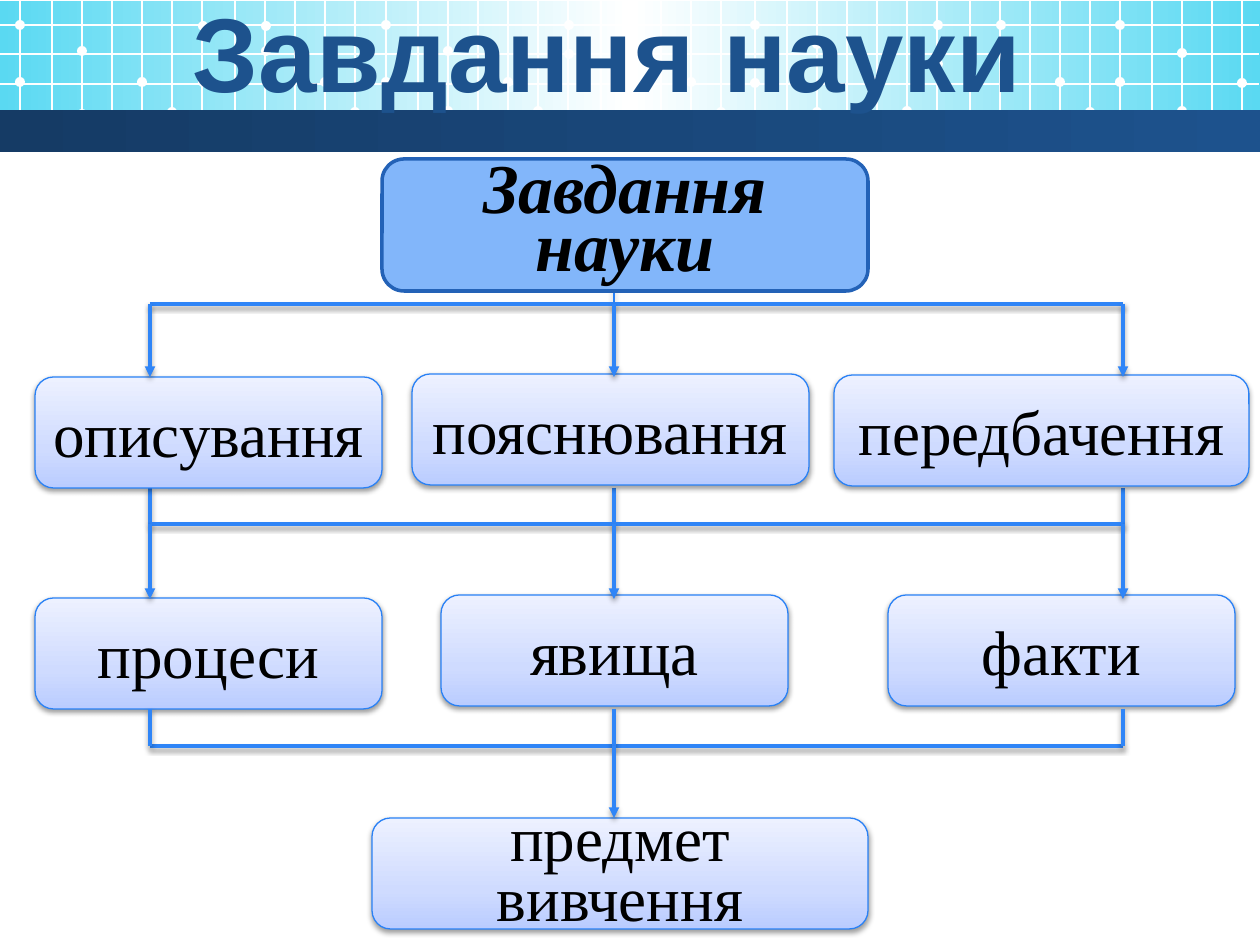
"""Build the slide on the tasks of science: a patterned header above a flow diagram."""
import dataclasses

import lxml.etree
import pptx
import pptx.dml.color
import pptx.enum.shapes
import pptx.enum.text
import pptx.oxml
import pptx.oxml.ns
import pptx.util

DRAWING = "http://schemas.openxmlformats.org/drawingml/2006/main"
SHADOW = (
    f'<a:effectLst xmlns:a="{DRAWING}"><a:outerShdw blurRad="39370" dist="20320" dir="5400000" '
    'rotWithShape="0"><a:srgbClr val="000000"><a:alpha val="38000"/></a:srgbClr>'
    "</a:outerShdw></a:effectLst>"
)


@dataclasses.dataclass(frozen=True)
class Theme:
    white: str = "FFFFFF"
    black: str = "000000"
    title: str = "1D528D"
    root_fill: str = "82B6FA"
    root_line: str = "2362B7"
    box_line: str = "2981F6"
    link: str = "2F85F7"
    header: tuple = ((0, "5AD9F2"), (50, "FFFFFF"), (100, "5AD9F2"))
    band: tuple = ((0, "153B65"), (100, "1D528D"))
    box: tuple = ((0, "BACCFF"), (35, "CFDBFF"), (100, "EDF1FF"))
    title_font: str = "Arial"
    body_font: str = "Times New Roman"
    title_size: int = 60
    root_size: int = 40
    body_size: int = 36
    thin: float = 0.75
    thick: float = 2


class SlideBuilder:
    def __init__(self, presentation, theme):
        self.theme = theme
        self.slide = presentation.slides.add_slide(presentation.slide_layouts[6])

    @staticmethod
    def px(length):
        return pptx.util.Emu(round(length * 914400 / 126))

    @staticmethod
    def color(value):
        return pptx.dml.color.RGBColor.from_string(value)

    def paint(self, shape, fill, angle=0):
        if isinstance(fill, str):
            shape.fill.solid()
            shape.fill.fore_color.rgb = self.color(fill)
            return
        shape.fill.gradient()
        shape.fill.gradient_angle = angle
        stops = shape._element.spPr.find(".//" + pptx.oxml.ns.qn("a:gsLst"))
        for stop in list(stops):
            stops.remove(stop)
        for position, value in fill:
            stop = lxml.etree.SubElement(stops, pptx.oxml.ns.qn("a:gs"), pos=str(position * 1000))
            lxml.etree.SubElement(stop, pptx.oxml.ns.qn("a:srgbClr"), val=value)

    def shape(self, kind, left, top, width, height, fill, angle=0):
        shape = self.slide.shapes.add_shape(kind, *map(self.px, (left, top, width, height)))
        shape.shadow.inherit = False
        shape.line.fill.background()
        self.paint(shape, fill, angle)
        return shape

    def rectangle(self, left, top, width, height, fill):
        return self.shape(pptx.enum.shapes.MSO_SHAPE.RECTANGLE, left, top, width, height, fill)

    def dot(self, x, y, size=10):
        half = size / 2
        self.shape(pptx.enum.shapes.MSO_SHAPE.OVAL, x - half, y - half, size, size, self.theme.white)

    def line(self, start, end, color, width, arrow=False, shadow=False):
        connector = self.slide.shapes.add_connector(
            pptx.enum.shapes.MSO_CONNECTOR.STRAIGHT, *map(self.px, (*start, *end))
        )
        connector.line.color.rgb = self.color(color)
        connector.line.width = pptx.util.Pt(width)
        if arrow:
            line = connector.line._get_or_add_ln()
            lxml.etree.SubElement(line, pptx.oxml.ns.qn("a:tailEnd"), type="triangle")
        effects = SHADOW if shadow else f'<a:effectLst xmlns:a="{DRAWING}"/>'
        connector._element.spPr.append(pptx.oxml.parse_xml(effects))

    def link(self, start, end, arrow=False):
        self.line(start, end, self.theme.link, self.theme.thick, arrow, shadow=True)

    def label(self, shape, text, font, size, color, bold=False, italic=False, spacing=None):
        frame = shape.text_frame
        frame.word_wrap = True
        frame.vertical_anchor = pptx.enum.text.MSO_ANCHOR.MIDDLE
        frame.text = text
        paragraph = frame.paragraphs[0]
        paragraph.alignment = pptx.enum.text.PP_ALIGN.CENTER
        if spacing:
            paragraph.line_spacing = spacing
        run = paragraph.runs[0]
        run.font.name = font
        run.font.size = pptx.util.Pt(size)
        run.font.bold = bold
        run.font.italic = italic
        run.font.color.rgb = self.color(color)

    def title(self, text, left, top, width, height):
        theme = self.theme
        shape = self.slide.shapes.add_textbox(*map(self.px, (left, top, width, height)))
        self.label(shape, text, theme.title_font, theme.title_size, theme.title, bold=True, spacing=0.8)
        shape.text_frame.vertical_anchor = pptx.enum.text.MSO_ANCHOR.TOP
        shape.text_frame.auto_size = pptx.enum.text.MSO_AUTO_SIZE.SHAPE_TO_FIT_TEXT

    def box(self, text, left, top, width, height=111, root=False, spacing=None):
        theme = self.theme
        shape = self.shape(
            pptx.enum.shapes.MSO_SHAPE.ROUNDED_RECTANGLE, left, top, width, height,
            theme.root_fill if root else theme.box, angle=90,
        )
        shape.line.color.rgb = self.color(theme.root_line if root else theme.box_line)
        shape.line.width = pptx.util.Pt(theme.thick if root else theme.thin)
        if not root:
            properties = shape._element.spPr
            properties.remove(properties.find(pptx.oxml.ns.qn("a:effectLst")))
            properties.append(pptx.oxml.parse_xml(SHADOW))
        size = theme.root_size if root else theme.body_size
        self.label(shape, text, theme.body_font, size, theme.black, root, root, spacing)


def draw_header(builder):
    theme = builder.theme
    grid_columns = (0, 32, 62, 92, 122, 152, 182, 215, 245, 275, 305, 335)
    dot_columns = (0, 0, 62, 62, 122, 152, 183, 183, 246, 246, 305, 335)
    tiles = (
        (20, 12, (82, 25, 51, 114, 82, 112, 82, 26, 51, 26, 82, 112)),
        (386, 12, (82, 25, 51, 111, 82, 111, 54, 25, 53, 25, 82, 112)),
        (755, 12, (83, 25, 44, 112, 81, 111, 64, 25, 51, 25, 82, 112)),
        (1120, 5, (82, 25, 53, 111, 83)),
    )
    builder.rectangle(0, 1, 1260, 129, theme.header)
    for left, column_count, dot_rows in tiles:
        for offset, y in zip(dot_columns, dot_rows):
            builder.dot(left + offset, y)
        for offset in grid_columns[:column_count]:
            builder.line((left + offset, 0), (left + offset, 139), theme.white, theme.thin)
    for y in (25, 54, 84, 112):
        builder.line((-1, y), (1259, y), theme.white, theme.thin)
    builder.rectangle(0, 110, 1260, 42, theme.band)
    builder.title("Завдання науки", 44, 6, 1126, 115)


def draw_diagram(builder):
    theme = builder.theme
    columns = left, middle, right = 150, 614, 1123
    first_rail, second_rail, third_rail = 304, 524, 746

    for x in columns:
        builder.link((x, 488), (x, second_rail))
    builder.link((left, second_rail), (right, second_rail))
    builder.line((middle, 266), (middle, first_rail), theme.box_line, theme.thin, shadow=True)

    for text, x, y, width in (
        ("описування", 35, 377, 347),
        ("пояснювання", 412, 374, 397),
        ("передбачення", 834, 375, 415),
        ("процеси", 35, 598, 347),
        ("явища", 441, 595, 347),
        ("факти", 888, 595, 347),
    ):
        builder.box(text, x, y, width)
    builder.box("предмет вивчення", 372, 818, 496, spacing=0.8)
    builder.box("Завдання науки", 382, 159, 486, 132, root=True, spacing=0.7)

    for y in (first_rail, third_rail):
        builder.link((left, y), (right, y))
    for x in columns:
        builder.link((x, first_rail), (x, 377), arrow=True)
        builder.link((x, second_rail), (x, 599), arrow=True)
        builder.link((x, 709), (x, third_rail))
    builder.link((middle, third_rail), (middle, 818), arrow=True)


def main():
    presentation = pptx.Presentation()
    presentation.slide_width = SlideBuilder.px(1260)
    presentation.slide_height = SlideBuilder.px(945)
    builder = SlideBuilder(presentation, Theme())
    draw_header(builder)
    draw_diagram(builder)
    presentation.save("out.pptx")


if __name__ == "__main__":
    main()
